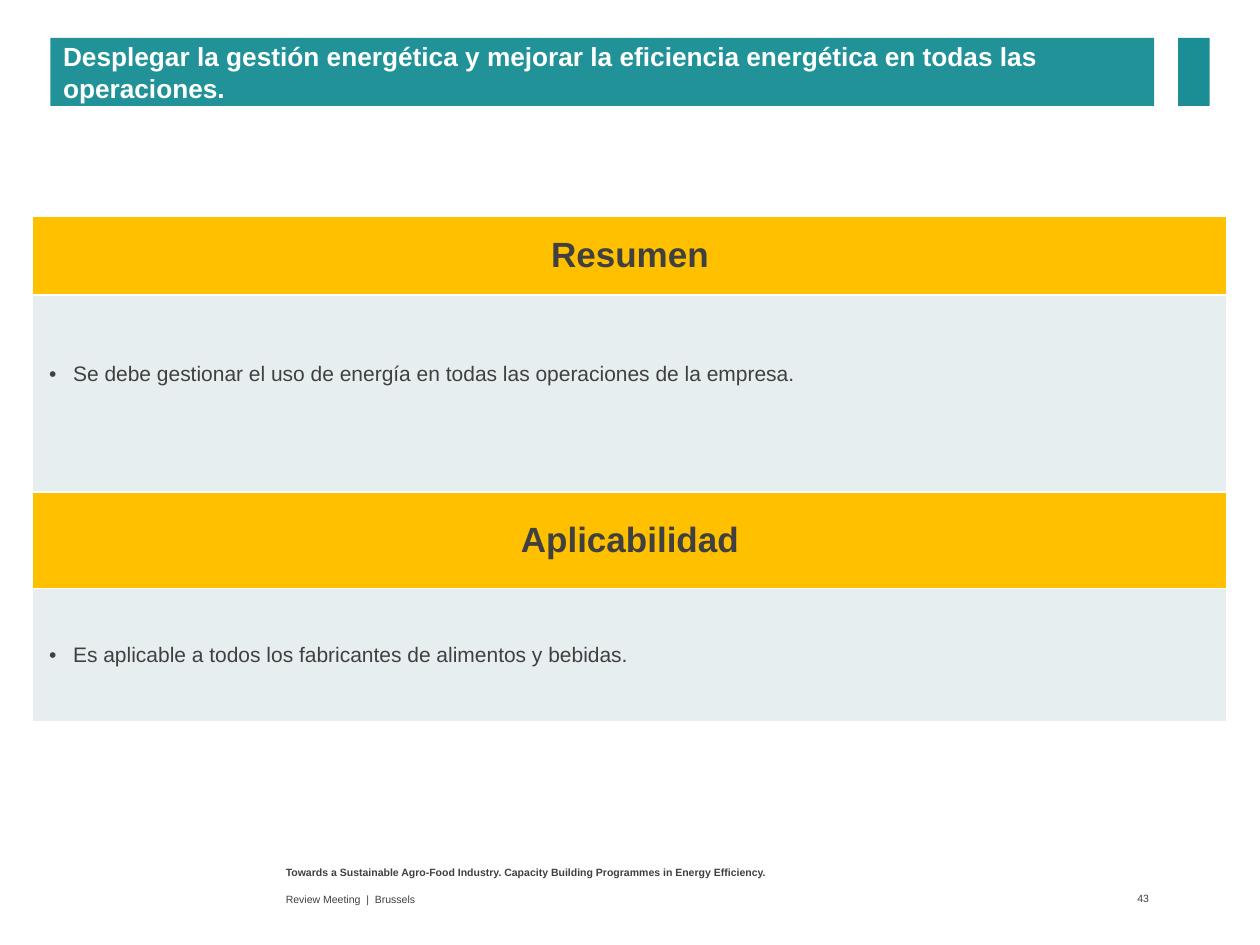
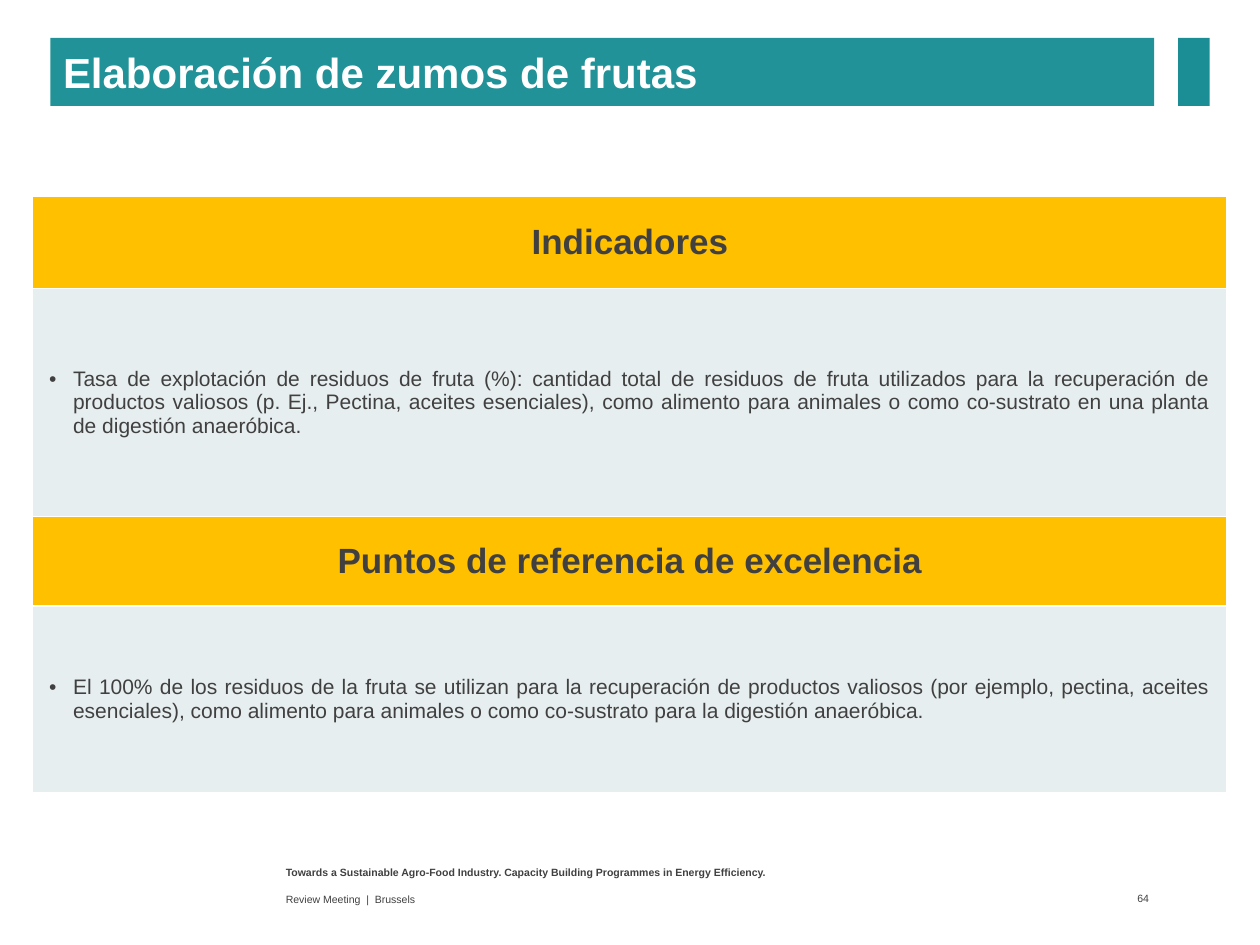
from lxml.etree import SubElement
from pptx import Presentation
from pptx.dml.color import RGBColor
from pptx.enum.shapes import MSO_SHAPE
from pptx.enum.text import MSO_ANCHOR, MSO_AUTO_SIZE, PP_ALIGN
from pptx.oxml import parse_xml
from pptx.oxml.ns import nsdecls, qn
from pptx.util import Pt

SCALE = 9144
TEAL, DARK, GOLD, PALE = "209298", "1B8E95", "FFC000", "E7EEEF"
INK, WHITE = "404040", "FFFFFF"
TAG = "Towards a Sustainable Agro-Food Industry. Capacity Building Programmes in Energy Efficiency."
VENUE = "Review Meeting  |  Brussels"

PAGES = [
    ("Desplegar la gestión energética y mejorar la eficiencia energética en todas las operaciones.",
     15, "43", [
         (172, (62, 156), "Resumen",
          "Se debe gestionar el uso de energía en todas las operaciones de la empresa.", 6, 36),
         (391, (76, 106), "Aplicabilidad",
          "Es aplicable a todos los fabricantes de alimentos y bebidas.", 6, 6),
     ]),
    ("Elaboración de zumos de frutas", 24, "64", [
        (156, (73, 181), "Indicadores",
         "Tasa de explotación de residuos de fruta (%): cantidad total de residuos de fruta "
         "utilizados para la recuperación de productos valiosos (p. Ej., Pectina, aceites "
         "esenciales), como alimento para animales o como co-sustrato en una planta de "
         "digestión anaeróbica.", 0, 6),
        (410, (71, 148), "Puntos de referencia de excelencia",
         "El 100% de los residuos de la fruta se utilizan para la recuperación de productos "
         "valiosos (por ejemplo, pectina, aceites esenciales), como alimento para animales o "
         "como co-sustrato para la digestión anaeróbica.", 6, 6),
    ]),
]


def px(num):
    return num * SCALE


def tint(code):
    return RGBColor.from_string(code)


def paint(item, code):
    item.fill.solid()
    item.fill.fore_color.rgb = tint(code)


class Deck:
    face = "Arial"

    def __init__(self):
        self.show = Presentation()
        self.show.slide_width, self.show.slide_height = px(1000), px(750)
        self.slide = None

    def page(self):
        self.slide = self.show.slides.add_slide(self.show.slide_layouts[5])

    def words(self, frame, text, size, code=INK, bold=False, align=PP_ALIGN.LEFT):
        para = frame.paragraphs[0]
        para.text = text
        para.alignment = align
        font = para.font
        font.name, font.size, font.bold = self.face, Pt(size), bold
        font.color.rgb = tint(code)
        return para

    def inset(self, item, left, top, right, low):
        item.margin_left, item.margin_top = px(left), px(top)
        item.margin_right, item.margin_bottom = px(right), px(low)

    def title(self, text, size):
        band = self.slide.shapes.title
        band.left, band.top, band.width, band.height = map(px, (40, 30, 876, 54))
        paint(band, TEAL)
        frame = band.text_frame
        frame.word_wrap = True
        frame.auto_size = MSO_AUTO_SIZE.NONE
        frame.vertical_anchor = MSO_ANCHOR.MIDDLE
        self.inset(frame, 10, 5, 10, 5)
        self.words(frame, text, size, WHITE, True)

    def block(self, box, code):
        shape = self.slide.shapes.add_shape(MSO_SHAPE.RECTANGLE, *map(px, box))
        shape.shadow.inherit = False
        paint(shape, code)
        shape.line.fill.background()

    def label(self, box, text, bold=False, align=PP_ALIGN.LEFT,
              anchor=MSO_ANCHOR.MIDDLE, right=10):
        frame = self.slide.shapes.add_textbox(*map(px, box)).text_frame
        frame.word_wrap = True
        frame.vertical_anchor = anchor
        self.inset(frame, 10, 5, right, 5)
        self.words(frame, text, 6, INK, bold, align)

    def cell(self, cell, code):
        paint(cell, code)
        cell.vertical_anchor = MSO_ANCHOR.MIDDLE
        props = cell._tc.get_or_add_tcPr()
        for spot, side in enumerate("LRTB"):
            props.insert(spot, parse_xml(
                f'<a:ln{side} {nsdecls("a")} w="12700"><a:solidFill>'
                f'<a:srgbClr val="{WHITE}"/></a:solidFill></a:ln{side}>'))

    def panel(self, top, rows, head, body, after, low):
        grid = self.slide.shapes.add_table(
            2, 1, *map(px, (26, top, 948, sum(rows)))).table
        for row, high in zip(grid.rows, rows):
            row.height = px(high)
        upper, lower = grid.cell(0, 0), grid.cell(1, 0)
        self.cell(upper, GOLD)
        self.inset(upper, 10, 5, 10, 5)
        self.words(upper.text_frame, head, 20, INK, True, PP_ALIGN.CENTER)
        self.cell(lower, PALE)
        self.inset(lower, 13, 6, 13, low)
        self.bullet(lower.text_frame.paragraphs[0])
        para = self.words(lower.text_frame, body, 12, align=PP_ALIGN.JUSTIFY)
        para.space_after = Pt(after)

    def bullet(self, para):
        props = para._p.get_or_add_pPr()
        props.set("marL", str(px(19)))
        props.set("indent", str(px(-19)))
        SubElement(props, qn("a:buFont")).set("typeface", self.face)
        SubElement(props, qn("a:buChar")).set("char", "•")

    def foot(self, num):
        self.label((217, 682, 550, 21), TAG, True, anchor=MSO_ANCHOR.TOP)
        self.label((217, 704, 550, 19), VENUE)
        self.label((860, 703, 56, 20), num, align=PP_ALIGN.RIGHT, right=4)


def main():
    deck = Deck()
    for title, size, num, panels in PAGES:
        deck.page()
        deck.title(title, size)
        deck.block((935, 30, 25, 54), DARK)
        for panel in panels:
            deck.panel(*panel)
        deck.foot(num)
    deck.show.save("out.pptx")


if __name__ == "__main__":
    main()
